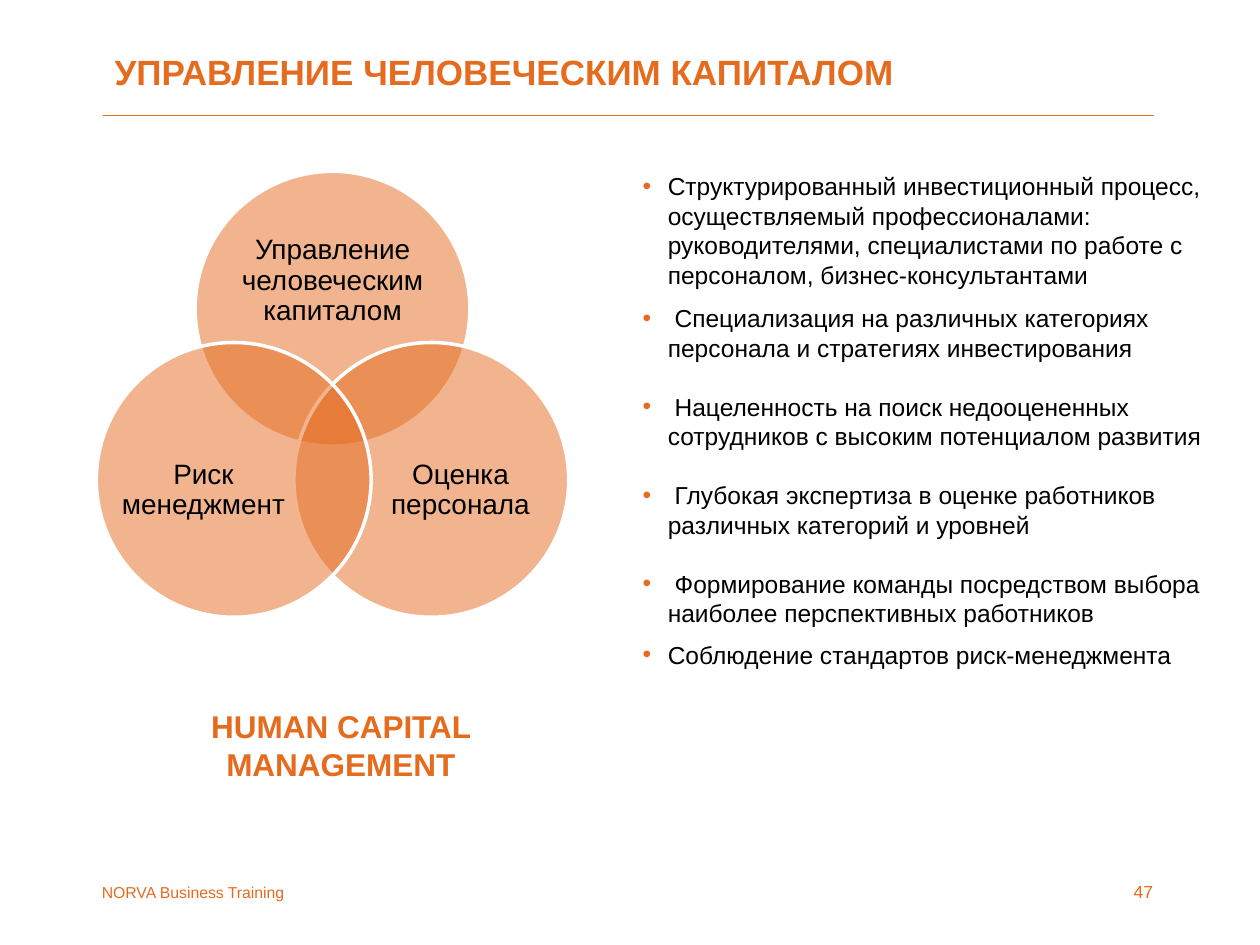
import math
from dataclasses import dataclass

import lxml.etree
import pptx
import pptx.dml.color
import pptx.enum.shapes
import pptx.enum.text
import pptx.oxml
import pptx.oxml.ns
import pptx.util

Pt = pptx.util.Pt
Align = pptx.enum.text.PP_ALIGN
Anchor = pptx.enum.text.MSO_ANCHOR
AutoSize = pptx.enum.text.MSO_AUTO_SIZE
qn = pptx.oxml.ns.qn

ORANGE = pptx.dml.color.RGBColor(0xE5, 0x6B, 0x1F)
BLACK = pptx.dml.color.RGBColor(0, 0, 0)
WHITE = pptx.dml.color.RGBColor(0xFF, 0xFF, 0xFF)
FONT = "Arial"

VENN_CENTER_X, VENN_CENTER_Y = 190, 241.6
VENN_RADIUS = 65.2
CIRCLE_DIAMETER = 157
BULLET_INDENT = 14.4


@dataclass
class Box:
    left: float
    top: float
    width: float
    height: float

    def lengths(self) -> tuple:
        return Pt(self.left), Pt(self.top), Pt(self.width), Pt(self.height)


@dataclass
class Style:
    size: float
    color: pptx.dml.color.RGBColor = ORANGE
    bold: bool = False
    align: Align = Align.LEFT


@dataclass
class VennCircle:
    angle: float
    label: str
    label_box: Box


@dataclass
class Bullet:
    text: str
    space_before: float


CIRCLES = [
    VennCircle(-90, "Управление человеческим капиталом", Box(132.5, 125.3, 115.2, 70.6)),
    VennCircle(30, "Оценка персонала", Box(216, 236.9, 94.3, 86.4)),
    VennCircle(150, "Риск менеджмент", Box(69.1, 236.9, 94.3, 86.4)),
]

BULLETS = [
    Bullet("Структурированный инвестиционный процесс, осуществляемый профессионалами: "
           "руководителями, специалистами по работе с персоналом, бизнес-консультантами", 0),
    Bullet(" Специализация на различных категориях персонала и стратегиях инвестирования", 8.2),
    Bullet(" Нацеленность на поиск недооцененных сотрудников с высоким потенциалом развития", 16.9),
    Bullet(" Глубокая экспертиза в оценке работников различных категорий и уровней", 16.9),
    Bullet(" Формирование команды посредством выбора наиболее перспективных работников", 16.9),
    Bullet("Соблюдение стандартов риск-менеджмента", 7),
]


def format_paragraph(paragraph, style: Style) -> None:
    paragraph.alignment = style.align
    for run in paragraph.runs:
        run.font.name = FONT
        run.font.size = Pt(style.size)
        run.font.bold = style.bold
        run.font.color.rgb = style.color


def place(shape, box: Box) -> None:
    shape.left, shape.top, shape.width, shape.height = box.lengths()


def add_text(slide, text: str, box: Box, style: Style):
    shape = slide.shapes.add_textbox(*box.lengths())
    shape.text_frame.word_wrap = True
    shape.text_frame.text = text
    format_paragraph(shape.text_frame.paragraphs[0], style)
    return shape


def add_rule(slide) -> None:
    rule = slide.shapes.add_connector(
        pptx.enum.shapes.MSO_CONNECTOR.STRAIGHT, Pt(59), Pt(66), Pt(659.5), Pt(66))
    rule.line.color.rgb = ORANGE
    rule.line.width = Pt(1)
    lxml.etree.SubElement(rule._element.spPr, qn("a:effectLst"))


def add_venn_circle(slide, circle: VennCircle) -> None:
    angle = math.radians(circle.angle)
    left = VENN_CENTER_X + VENN_RADIUS * math.cos(angle) - CIRCLE_DIAMETER / 2
    top = VENN_CENTER_Y + VENN_RADIUS * math.sin(angle) - CIRCLE_DIAMETER / 2
    shape = slide.shapes.add_shape(
        pptx.enum.shapes.MSO_SHAPE.OVAL,
        *Box(left, top, CIRCLE_DIAMETER, CIRCLE_DIAMETER).lengths())
    shape.shadow.inherit = False
    shape.fill.solid()
    shape.fill.fore_color.rgb = ORANGE
    color = shape._element.spPr.find(qn("a:solidFill")).find(qn("a:srgbClr"))
    lxml.etree.SubElement(color, qn("a:alpha"), val="50000")
    shape.line.color.rgb = WHITE
    shape.line.width = Pt(2)

    label = add_text(slide, circle.label, circle.label_box,
                     Style(16, BLACK, align=Align.CENTER))
    frame = label.text_frame
    frame.margin_left = frame.margin_right = frame.margin_top = frame.margin_bottom = 0
    frame.vertical_anchor = Anchor.MIDDLE
    frame.paragraphs[0].line_spacing = 0.9


def fill_title(slide) -> None:
    title = slide.shapes.title
    place(title, Box(58.3, 15.1, 643.7, 51.8))
    title.text_frame.text = "УПРАВЛЕНИЕ ЧЕЛОВЕЧЕСКИМ КАПИТАЛОМ"
    title.text_frame.auto_size = AutoSize.NONE
    title.text_frame.vertical_anchor = Anchor.MIDDLE
    format_paragraph(title.text_frame.paragraphs[0], Style(20, bold=True))


def add_bullet_mark(paragraph) -> None:
    properties = paragraph._p.get_or_add_pPr()
    properties.set("marL", str(Pt(BULLET_INDENT)))
    properties.set("indent", str(-Pt(BULLET_INDENT)))
    bullet_color = lxml.etree.SubElement(properties, qn("a:buClr"))
    lxml.etree.SubElement(bullet_color, qn("a:srgbClr"), val=str(ORANGE))
    lxml.etree.SubElement(properties, qn("a:buFont"), typeface=FONT)
    lxml.etree.SubElement(properties, qn("a:buChar"), char="•")


def fill_body(slide) -> None:
    body = slide.placeholders[1]
    place(body, Box(360, 94.3, 334.1, 295.2))
    frame = body.text_frame
    frame.auto_size = AutoSize.NONE
    frame.text = "\n".join(bullet.text for bullet in BULLETS)
    for paragraph, bullet in zip(frame.paragraphs, BULLETS):
        format_paragraph(paragraph, Style(14, BLACK))
        paragraph.space_before = Pt(bullet.space_before)
        paragraph.space_after = Pt(0)
        add_bullet_mark(paragraph)


def main() -> None:
    presentation = pptx.Presentation()
    presentation.slide_width = Pt(720)
    presentation.slide_height = Pt(540)
    slide = presentation.slides.add_slide(presentation.slide_layouts[1])

    add_rule(slide)
    add_text(slide, "47", Box(630, 499.7, 36, 19.4), Style(10, align=Align.RIGHT))
    add_text(slide, "NORVA Business Training", Box(51.1, 501.1, 146.2, 18), Style(9))
    for circle in CIRCLES:
        add_venn_circle(slide, circle)
    fill_title(slide)
    add_text(slide, "HUMAN CAPITAL MANAGEMENT", Box(81.4, 400.3, 226.8, 51.1),
             Style(18, bold=True, align=Align.CENTER))
    fill_body(slide)

    presentation.save("out.pptx")


if __name__ == "__main__":
    main()
